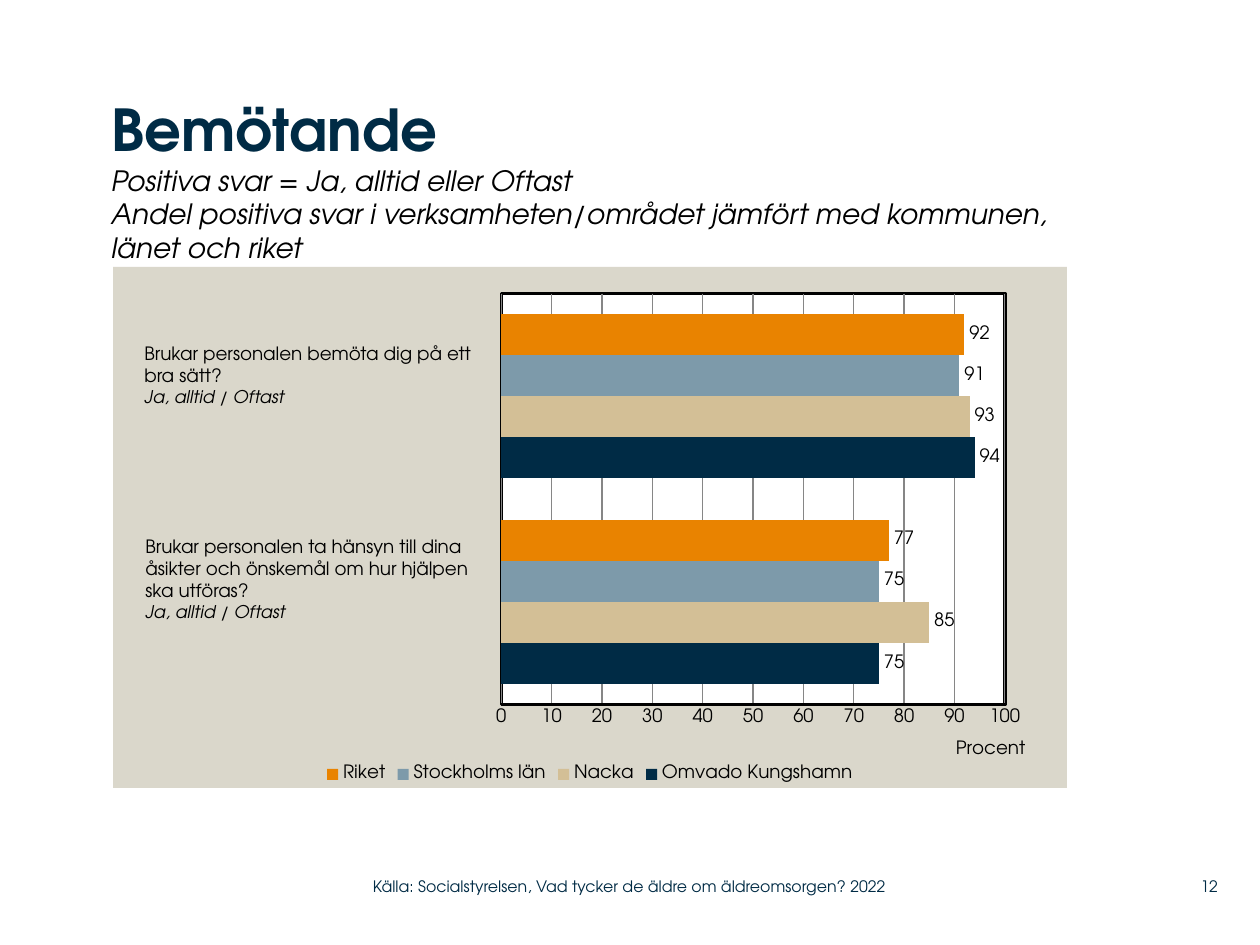
import copy
from dataclasses import dataclass

import lxml.etree
import pptx
import pptx.chart.data
import pptx.dml.color
import pptx.enum.chart
import pptx.enum.text
import pptx.oxml
import pptx.oxml.ns
import pptx.util

PX = 914400 / 126


@dataclass(frozen=True)
class Theme:
    font: str = "TeX Gyre Adventor"
    navy: str = "002B45"
    black: str = "000000"
    white: str = "FFFFFF"
    panel: str = "DAD7CB"
    sand: str = "D3BF96"
    steel: str = "7D9AAA"
    orange: str = "E98300"
    grid: str = "868686"
    title: float = 33
    subtitle: float = 16
    label: float = 10.5
    answer: float = 10
    footer: float = 9


def px(value):
    return round(value * PX)


def rgb(color):
    return pptx.dml.color.RGBColor.from_string(color)


def chart_xml(tag, content):
    return pptx.oxml.parse_xml(f"<c:{tag} {pptx.oxml.ns.nsdecls('c', 'a')}>{content}</c:{tag}>")


def solid_fill(color):
    return f'<a:solidFill><a:srgbClr val="{color}"/></a:solidFill>'


def manual_layout(x, y, w=None, h=None):
    """Place a chart part by fractions of the chart area."""
    target = '<c:layoutTarget val="inner"/>' if w else ""
    parts = '<c:xMode val="edge"/><c:yMode val="edge"/>'
    for tag, value in zip("xywh", (x, y, w, h)):
        if value is not None:
            parts += f'<c:{tag} val="{value}"/>'
    return chart_xml("layout", f"<c:manualLayout>{target}{parts}</c:manualLayout>")


class SlideBuilder:
    def __init__(self, deck, theme):
        self.theme = theme
        self.page = deck.slides.add_slide(deck.slide_layouts[5])

    def style(self, font, size, color, bold=False, italic=False):
        font.name = self.theme.font
        font.size = pptx.util.Pt(size)
        font.color.rgb = rgb(color)
        font.bold = bold
        font.italic = italic

    def frame(self, box, anchor, inset):
        frame = box.text_frame
        frame.word_wrap = True
        frame.auto_size = pptx.enum.text.MSO_AUTO_SIZE.NONE
        frame.vertical_anchor = anchor
        if not inset:
            frame.margin_left = frame.margin_right = 0
            frame.margin_top = frame.margin_bottom = 0
        return frame

    def title(self, left, top, width, height, heading, details):
        box = self.page.shapes.title
        box.left, box.top, box.width, box.height = map(px, (left, top, width, height))
        frame = self.frame(box, pptx.enum.text.MSO_ANCHOR.TOP, inset=False)
        frame.text = "\v".join([heading, *details])
        para = frame.paragraphs[0]
        para.alignment = pptx.enum.text.PP_ALIGN.LEFT
        first, *others = para.runs
        self.style(first.font, self.theme.title, self.theme.navy, bold=True)
        for span in others:
            self.style(span.font, self.theme.subtitle, self.theme.black, italic=True)
        # Line breaks take the size of the line they end
        for line_break in para._p.findall(pptx.oxml.ns.qn("a:br")):
            line_break.append(copy.deepcopy(line_break.getprevious().rPr))

    def text_box(self, left, top, width, height, text, anchor, inset):
        box = self.page.shapes.add_textbox(*map(px, (left, top, width, height)))
        frame = self.frame(box, anchor, inset)
        frame.text = text
        return frame.paragraphs

    def question(self, left, top, width, height, lines, answer):
        paras = self.text_box(left, top, width, height, "\n".join([*lines, answer]),
                              pptx.enum.text.MSO_ANCHOR.TOP, inset=True)
        for para in paras[:-1]:
            self.style(para.runs[0].font, self.theme.label, self.theme.black)
        self.style(paras[-1].runs[0].font, self.theme.answer, self.theme.black, italic=True)

    def footer(self, left, top, width, height, text, alignment):
        para = self.text_box(left, top, width, height, text,
                             pptx.enum.text.MSO_ANCHOR.MIDDLE, inset=False)[0]
        para.alignment = alignment
        self.style(para.runs[0].font, self.theme.footer, self.theme.navy)

    def bar_chart(self, left, top, width, height, categories, series):
        theme = self.theme
        data = pptx.chart.data.CategoryChartData(number_format="0")
        data.categories = categories
        for name, values, _ in series:
            data.add_series(name, values)
        chart = self.page.shapes.add_chart(
            pptx.enum.chart.XL_CHART_TYPE.BAR_CLUSTERED,
            *map(px, (left, top, width, height)), data).chart
        self.style(chart.font, theme.label, theme.black)
        chart.has_title = False
        chart.has_legend = True
        chart.legend.position = pptx.enum.chart.XL_LEGEND_POSITION.BOTTOM
        chart.legend.include_in_layout = False
        self.style(chart.legend.font, theme.label, theme.black)

        plot = chart.plots[0]
        plot.gap_width = 100
        plot.overlap = 0
        plot.vary_by_categories = False
        for bars, (_, _, color) in zip(plot.series, series):
            bars.format.fill.solid()
            bars.format.fill.fore_color.rgb = rgb(color)
            labels = bars.data_labels
            labels.show_value = True
            labels.position = pptx.enum.chart.XL_LABEL_POSITION.OUTSIDE_END
            self.style(labels.font, theme.label, theme.black)

        chart.category_axis.visible = False
        self.percent_axis(chart.value_axis)
        self.chart_areas(chart)

    def percent_axis(self, axis):
        theme = self.theme
        axis.minimum_scale, axis.maximum_scale, axis.major_unit = 0, 100, 10
        axis.major_tick_mark = pptx.enum.chart.XL_TICK_MARK.NONE
        axis.minor_tick_mark = pptx.enum.chart.XL_TICK_MARK.NONE
        axis.format.line.color.rgb = rgb(theme.black)
        axis.format.line.width = pptx.util.Pt(2)
        axis.major_gridlines.format.line.color.rgb = rgb(theme.grid)
        axis.major_gridlines.format.line.width = pptx.util.Pt(0.75)
        self.style(axis.tick_labels.font, theme.label, theme.black)
        title = axis.axis_title
        title.text_frame.text = "Procent"
        self.style(title.text_frame.paragraphs[0].runs[0].font, theme.label, theme.black)
        element = title._element
        for layout in element.findall(pptx.oxml.ns.qn("c:layout")):
            element.remove(layout)
        element.find(pptx.oxml.ns.qn("c:tx")).addnext(manual_layout(0.88, 0.9))

    def chart_areas(self, chart):
        """Fill the chart and plot areas and frame the plot."""
        theme = self.theme
        body = chart._chartSpace.chart
        body.addnext(chart_xml("spPr", solid_fill(theme.panel) + "<a:ln><a:noFill/></a:ln>"))
        area = body.plotArea
        for layout in area.findall(pptx.oxml.ns.qn("c:layout")):
            area.remove(layout)
        area.insert(0, manual_layout(0.407, 0.051, 0.528, 0.789))
        border = f'<a:ln w="{pptx.util.Pt(2)}">{solid_fill(theme.black)}</a:ln>'
        area.append(chart_xml("spPr", solid_fill(theme.white) + border))


def main():
    theme = Theme()
    deck = pptx.Presentation()
    deck.slide_width, deck.slide_height = px(1260), px(945)
    slide = SlideBuilder(deck, theme)
    slide.title(111, 94, 1013, 151, "Bemötande", [
        "Positiva svar = Ja, alltid eller Oftast",
        "Andel positiva svar i verksamheten/området jämfört med kommunen, länet och riket"])
    slide.bar_chart(113, 267, 954, 521, ["1", "2"], [
        ("Omvado Kungshamn", (75, 94), theme.navy),
        ("Nacka", (85, 93), theme.sand),
        ("Stockholms län", (75, 91), theme.steel),
        ("Riket", (77, 92), theme.orange)])
    answer = "Ja, alltid / Oftast"
    slide.question(132, 336, 374, 102,
                   ["Brukar personalen bemöta dig på ett", "bra sätt?"], answer)
    slide.question(133, 529, 379, 123,
                   ["Brukar personalen ta hänsyn till dina",
                    "åsikter och önskemål om hur hjälpen", "ska utföras?"], answer)
    align = pptx.enum.text.PP_ALIGN
    slide.footer(373, 868, 558, 37,
                 "Källa: Socialstyrelsen, Vad tycker de äldre om äldreomsorgen? 2022", align.LEFT)
    slide.footer(1159, 868, 59, 37, "12", align.RIGHT)
    deck.save("out.pptx")


if __name__ == "__main__":
    main()
